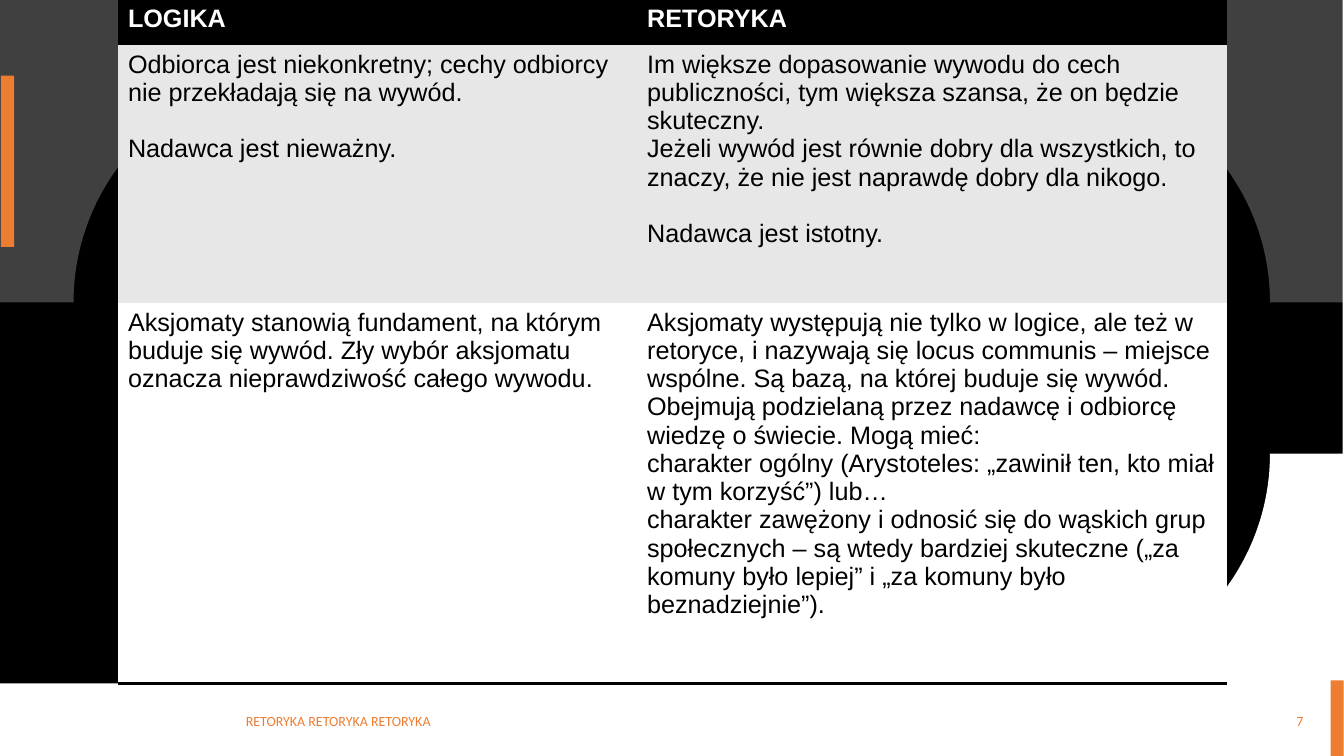
import pptx
import pptx.dml.color
import pptx.enum.shapes
import pptx.enum.text
import pptx.oxml
import pptx.oxml.ns
import pptx.util
from pptx.util import Inches

RGBColor = pptx.dml.color.RGBColor
BLACK = RGBColor(0, 0, 0)
WHITE = RGBColor(255, 255, 255)
GREY = RGBColor(0xE7, 0xE7, 0xE7)
ORANGE = RGBColor(0xED, 0x7D, 0x31)

SIDE = 3  # corner box
RADIUS = 2.27
BEND = 0.55 * RADIUS  # handle length of a quarter circle
GAP = 20  # points, one line of 18 pt text

# Each cell is a list of paragraphs: (text, points before it)
ROWS = [
    [[("LOGIKA", 0)], [("RETORYKA", 0)]],
    [
        [("Odbiorca jest niekonkretny; cechy odbiorcy nie przekładają się na wywód.", 0),
         ("Nadawca jest nieważny.", GAP)],
        [("Im większe dopasowanie wywodu do cech publiczności, tym większa szansa, "
          "że on będzie skuteczny.", 0),
         ("Jeżeli wywód jest równie dobry dla wszystkich, to znaczy, że nie jest "
          "naprawdę dobry dla nikogo.", 0),
         ("Nadawca jest istotny.", GAP)],
    ],
    [
        [("Aksjomaty stanowią fundament, na którym buduje się wywód. Zły wybór "
          "aksjomatu oznacza nieprawdziwość całego wywodu.", 0)],
        [("Aksjomaty występują nie tylko w logice, ale też w retoryce, i nazywają się "
          "locus communis – miejsce wspólne. Są bazą, na której buduje się wywód. "
          "Obejmują podzielaną przez nadawcę i odbiorcę wiedzę o świecie. Mogą mieć:", 0),
         ("charakter ogólny (Arystoteles: „zawinił ten, kto miał w tym korzyść”) lub…", 0),
         ("charakter zawężony i odnosić się do wąskich grup społecznych – są wtedy "
          "bardziej skuteczne („za komuny było lepiej” i „za komuny było "
          "beznadziejnie”).", 0)],
    ],
]
FILLS = [BLACK, GREY, WHITE]
WIDTHS = [5.15, 5.85]
HEIGHTS = [0.45, 2.56, 3.77]


def paint(shape, color):
    shape.shadow.inherit = False
    shape.fill.solid()
    shape.fill.fore_color.rgb = color
    shape.line.fill.background()


def add_bar(slide, left, top, width, height, color):
    kind = pptx.enum.shapes.MSO_SHAPE.RECTANGLE
    bar = slide.shapes.add_shape(
        kind, Inches(left), Inches(top), Inches(width), Inches(height))
    paint(bar, color)


def bend_first(shape, handles):
    """Turn the first straight segment into a curve with the two handles."""
    line = shape._element.find(".//" + pptx.oxml.ns.qn("a:lnTo"))
    curve = pptx.oxml.parse_xml(f'<a:cubicBezTo {pptx.oxml.ns.nsdecls("a")}/>')
    line.addprevious(curve)
    for x, y in handles:
        curve.append(pptx.oxml.parse_xml(
            f'<a:pt {pptx.oxml.ns.nsdecls("a")} '
            f'x="{x - shape.left}" y="{y - shape.top}"/>'))
    curve.append(line[0])
    line.getparent().remove(line)


def add_corner(slide, left, top, right, down, alpha=100):
    """Square at left, top less a quarter disc; right and down are the outer side, 1 or -1."""
    x = left if right > 0 else left + SIDE
    y = top if down > 0 else top + SIDE

    def spot(a, b):
        return Inches(x + right * a), Inches(y + down * b)

    maker = slide.shapes.build_freeform(*spot(RADIUS, 0))
    maker.add_line_segments(
        [spot(0, RADIUS), spot(0, SIDE), spot(SIDE, SIDE), spot(SIDE, 0)], close=True)
    corner = maker.convert_to_shape()
    bend_first(corner, [spot(RADIUS, BEND), spot(BEND, RADIUS)])
    paint(corner, WHITE)
    if alpha < 100:
        tint = corner.fill._xPr.find(".//" + pptx.oxml.ns.qn("a:srgbClr"))
        tint.append(pptx.oxml.parse_xml(
            f'<a:alpha {pptx.oxml.ns.nsdecls("a")} val="{alpha * 1000}"/>'))


def add_label(slide, left, top, width, height, text, align):
    box = slide.shapes.add_textbox(
        Inches(left), Inches(top), Inches(width), Inches(height))
    frame = box.text_frame
    frame.word_wrap = True
    frame.vertical_anchor = pptx.enum.text.MSO_ANCHOR.MIDDLE
    line = frame.paragraphs[0]
    line.text = text
    line.alignment = align
    line.space_after = pptx.util.Pt(6)
    line.font.size = pptx.util.Pt(10)
    line.font.name = "Calibri"
    line.font.color.rgb = ORANGE


def add_edge(cell, tag):
    edge = pptx.oxml.parse_xml(
        f'<a:{tag} {pptx.oxml.ns.nsdecls("a")} w="{pptx.util.Pt(2)}"><a:solidFill>'
        f'<a:srgbClr val="{BLACK}"/></a:solidFill></a:{tag}>')
    cell._tc.get_or_add_tcPr().insert(0, edge)


def fill_cell(cell, parts, fill, head):
    cell.fill.solid()
    cell.fill.fore_color.rgb = fill
    frame = cell.text_frame
    for i, (text, before) in enumerate(parts):
        para = frame.add_paragraph() if i else frame.paragraphs[0]
        para.text = text
        if before:
            para.space_before = pptx.util.Pt(before)
        para.font.size = pptx.util.Pt(18)
        para.font.name = "Arial"
        para.font.bold = head
        para.font.color.rgb = WHITE if head else BLACK


def add_grid(slide, left, top):
    frame = slide.shapes.add_table(
        len(ROWS), len(WIDTHS), Inches(left), Inches(top),
        Inches(sum(WIDTHS)), Inches(sum(HEIGHTS)))
    table = frame.table
    style = table._tbl.tblPr.find(pptx.oxml.ns.qn("a:tableStyleId"))
    style.text = "{2D5ABB26-0587-4C30-8999-92F81FD0307C}"  # no style, no grid
    table.horz_banding = False
    for column, width in zip(table.columns, WIDTHS):
        column.width = Inches(width)
    for r, row in enumerate(ROWS):
        table.rows[r].height = Inches(HEIGHTS[r])
        for c, parts in enumerate(row):
            fill_cell(table.cell(r, c), parts, FILLS[r], r == 0)
    for c in range(len(WIDTHS)):
        add_edge(table.cell(0, c), "lnT")
        add_edge(table.cell(len(ROWS) - 1, c), "lnB")


def add_back(slide):
    add_bar(slide, 0, 0, 13.32, 6.78, BLACK)
    add_corner(slide, 0, 0, -1, -1, alpha=25)
    add_corner(slide, 10.33, 4.5, 1, 1)
    add_bar(slide, 0.01, 0.75, 0.13, 1.7, ORANGE)
    add_corner(slide, 10.33, 0, 1, -1, alpha=25)


def add_foot(slide, top):
    align = pptx.enum.text.PP_ALIGN
    add_label(slide, 2.34, top + 0.2, 4.5, 0.4, "RETORYKA RETORYKA RETORYKA", align.LEFT)
    add_label(slide, 12.41, top + 0.2, 0.62, 0.4, "7", align.RIGHT)
    add_bar(slide, 13.2, top, 0.13, 0.75, ORANGE)


def main():
    deck = pptx.Presentation()
    deck.slide_width = Inches(40) // 3
    deck.slide_height = Inches(7.5)
    slide = deck.slides.add_slide(deck.slide_layouts[6])
    add_back(slide)
    add_foot(slide, 6.75)
    add_grid(slide, 1.17, 0)
    deck.save("out.pptx")


if __name__ == "__main__":
    main()
